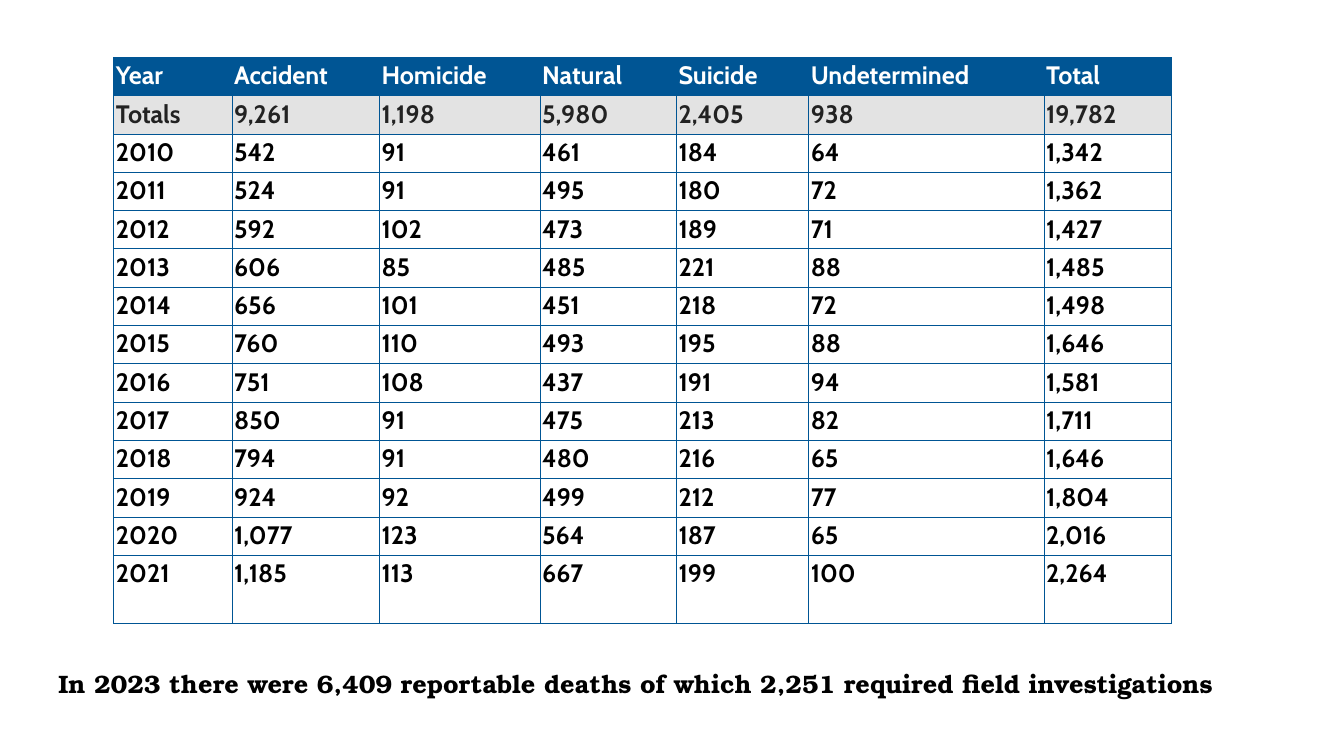
import pptx
import pptx.dml.color
import pptx.oxml
import pptx.oxml.ns
import pptx.util

WIDE, HIGH = 13.33, 7.5
BLUE, GREY, WHITE, DARK, BLACK = "005594", "E3E3E3", "FFFFFF", "222222", "000000"
COLS = (1.17, 1.46, 1.59, 1.35, 1.31, 2.33, 1.26)
DEATHS = """Year Accident Homicide Natural Suicide Undetermined Total
Totals 9,261 1,198 5,980 2,405 938 19,782
2010 542 91 461 184 64 1,342
2011 524 91 495 180 72 1,362
2012 592 102 473 189 71 1,427
2013 606 85 485 221 88 1,485
2014 656 101 451 218 72 1,498
2015 760 110 493 195 88 1,646
2016 751 108 437 191 94 1,581
2017 850 91 475 213 82 1,711
2018 794 91 480 216 65 1,646
2019 924 92 499 212 77 1,804
2020 1,077 123 564 187 65 2,016
2021 1,185 113 667 199 100 2,264"""
NOTE = "In 2023 there were 6,409 reportable deaths of which 2,251 required field investigations"


def inch(size):
    """Return a length in inches."""
    return pptx.util.Inches(size)


def paint(color, code):
    """Set a colour from a hex string."""
    color.rgb = pptx.dml.color.RGBColor.from_string(code)


def write(frame, text, face, code):
    """Add one bold run to the first paragraph of a frame."""
    run = frame.paragraphs[0].add_run()
    run.text = text
    run.font.name, run.font.size, run.font.bold = face, pptx.util.Pt(18), True
    paint(run.font.color, code)


def edge(cell):
    """Draw thin blue lines on all four sides of a cell."""
    props = cell._tc.get_or_add_tcPr()
    for side in "LRTB":
        props.append(pptx.oxml.parse_xml(
            f'<a:ln{side} {pptx.oxml.ns.nsdecls("a")} w="9525"><a:solidFill>'
            f'<a:srgbClr val="{BLUE}"/></a:solidFill></a:ln{side}>'))


def grid(slide, left, top, width, height):
    """Place the table of deaths, with its last row taller, in a box."""
    rows = [line.split() for line in DEATHS.splitlines()]
    table = slide.shapes.add_table(
        len(rows), len(COLS), inch(left), inch(top), inch(width), inch(height)).table
    table.horz_banding = False
    for col, share in zip(table.columns, COLS):
        col.width = inch(width * share / sum(COLS))
    step = 0.38
    for i, words in enumerate(rows):
        last = i == len(rows) - 1
        table.rows[i].height = inch(height - step * i if last else step)
        fill, ink = {0: (BLUE, WHITE), 1: (GREY, DARK)}.get(i, (WHITE, BLACK))
        for j, word in enumerate(words):
            cell = table.cell(i, j)
            cell.margin_left = cell.margin_right = inch(0.02)
            cell.margin_top = cell.margin_bottom = inch(0.03)
            edge(cell)
            cell.fill.solid()
            paint(cell.fill.fore_color, fill)
            write(cell.text_frame, word, "Cabin", ink)


def note(slide, left, top, width, height):
    """Place the closing sentence in a box."""
    box = slide.shapes.add_textbox(inch(left), inch(top), inch(width), inch(height))
    box.text_frame.word_wrap = False
    write(box.text_frame, NOTE, "TeX Gyre Bonum", BLACK)


def main():
    """Build and save the slide."""
    deck = pptx.Presentation()
    deck.slide_width, deck.slide_height = inch(WIDE), inch(HIGH)
    slide = deck.slides.add_slide(deck.slide_layouts[6])
    grid(slide, 1.13, 0.57, 10.49, 5.62)
    note(slide, 0.48, 6.58, 11.78, 0.71)
    deck.save("out.pptx")


if __name__ == "__main__":
    main()
